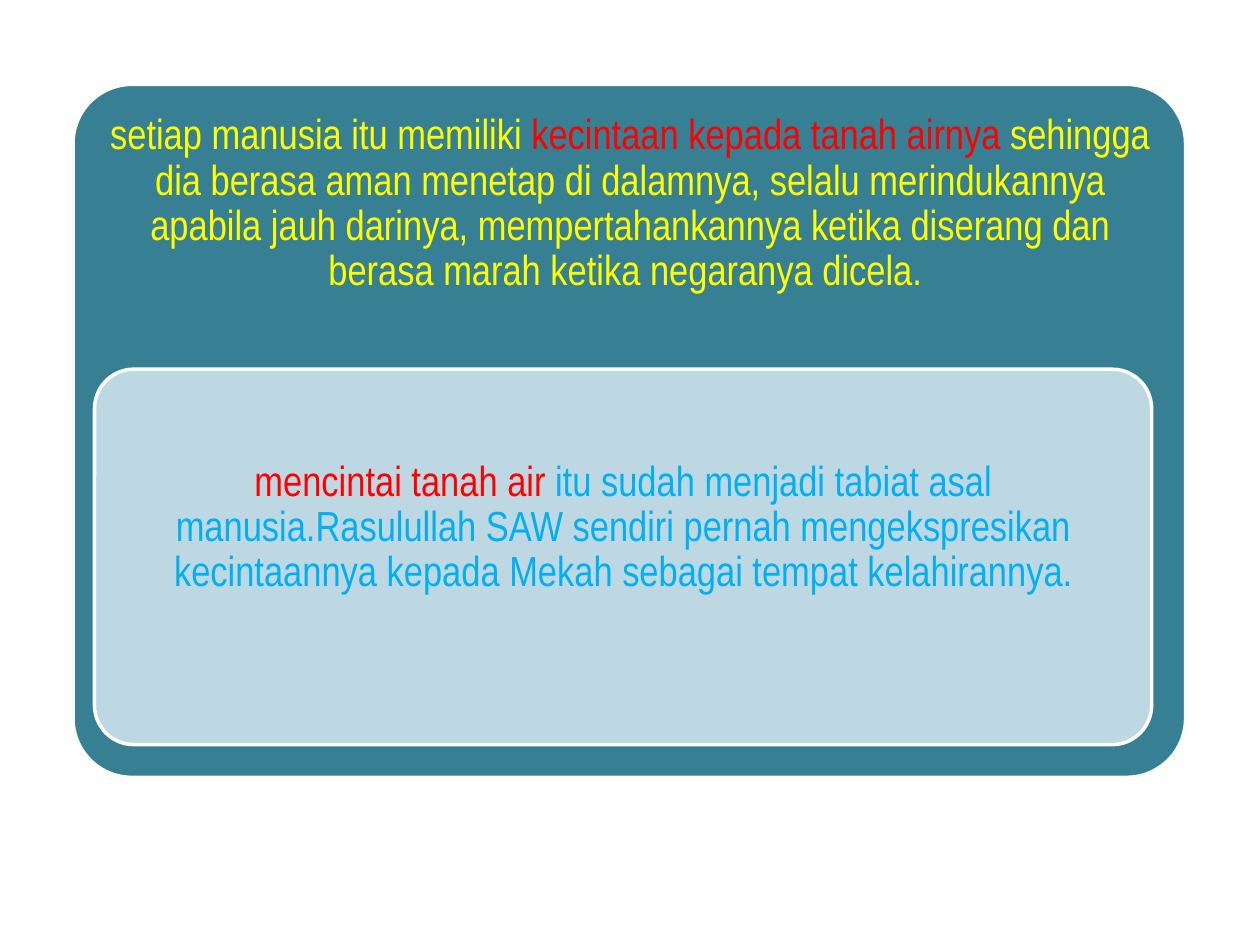
"""Build a slide with two nested rounded panels about love of the homeland."""
from dataclasses import dataclass

import pptx
import pptx.dml.color
import pptx.enum.shapes
import pptx.enum.text
import pptx.util

Inches = pptx.util.Inches
Pt = pptx.util.Pt
RGBColor = pptx.dml.color.RGBColor

WHITE = RGBColor(0xFF, 0xFF, 0xFF)
TEAL = RGBColor(0x37, 0x7F, 0x92)
PALE_BLUE = RGBColor(0xBE, 0xD8, 0xE3)
YELLOW = RGBColor(0xFF, 0xFF, 0x00)
RED = RGBColor(0xFF, 0x00, 0x00)
SKY_BLUE = RGBColor(0x00, 0xB0, 0xF0)
FONT = "Arial Narrow"
INSET = 0.1


@dataclass(frozen=True)
class Box:
    left: float
    top: float
    width: float
    height: float

    def lengths(self) -> tuple:
        return tuple(Inches(v) for v in (self.left, self.top, self.width, self.height))


@dataclass(frozen=True)
class Panel:
    frame: Box
    text_box: Box
    corner: float
    fill: RGBColor
    top_inset: float
    pieces: tuple[tuple[str, RGBColor], ...]


PANELS = (
    Panel(
        Box(0.58, 0.67, 8.83, 5.5), Box(0.72, 0.8, 8.56, 5.23), 0.085, TEAL, INSET,
        (
            ("setiap manusia itu memiliki ", YELLOW),
            ("kecintaan kepada tanah airnya ", RED),
            ("sehingga dia berasa aman menetap di dalamnya, selalu merindukannya "
             "apabila jauh darinya, mempertahankannya ketika diserang dan berasa "
             "marah ketika negaranya dicela. ", YELLOW),
        ),
    ),
    Panel(
        Box(0.75, 2.93, 8.39, 2.98), Box(0.84, 3.03, 8.21, 2.8), 0.105, PALE_BLUE, 0.62,
        (
            ("mencintai tanah air ", RED),
            ("itu sudah menjadi tabiat asal manusia.Rasulullah SAW sendiri pernah "
             "mengekspresikan kecintaannya kepada Mekah sebagai tempat "
             "kelahirannya.", SKY_BLUE),
        ),
    ),
)


def draw_frame(s: pptx.slide.Slide, panel: Panel) -> None:
    sp = s.shapes.add_shape(
        pptx.enum.shapes.MSO_SHAPE.ROUNDED_RECTANGLE, *panel.frame.lengths()
    )
    sp.shadow.inherit = False
    sp.adjustments[0] = panel.corner
    sp.fill.solid()
    sp.fill.fore_color.rgb = panel.fill
    sp.line.color.rgb = WHITE
    sp.line.width = Pt(2)


def draw_text(s: pptx.slide.Slide, panel: Panel) -> None:
    tf = s.shapes.add_textbox(*panel.text_box.lengths()).text_frame
    tf.word_wrap = True
    tf.vertical_anchor = pptx.enum.text.MSO_ANCHOR.TOP
    tf.margin_left = tf.margin_right = tf.margin_bottom = Inches(INSET)
    tf.margin_top = Inches(panel.top_inset)
    p = tf.paragraphs[0]
    p.alignment = pptx.enum.text.PP_ALIGN.CENTER
    p.line_spacing = 0.9
    for text, color in panel.pieces:
        r = p.add_run()
        r.text = text
        r.font.name = FONT
        r.font.size = Pt(24)
        r.font.color.rgb = color


def main() -> None:
    prs = pptx.Presentation()
    prs.slide_width = Inches(10)
    prs.slide_height = Inches(7.5)
    s = prs.slides.add_slide(prs.slide_layouts[6])
    for panel in PANELS:
        draw_frame(s, panel)
        draw_text(s, panel)
    prs.save("out.pptx")


if __name__ == "__main__":
    main()
